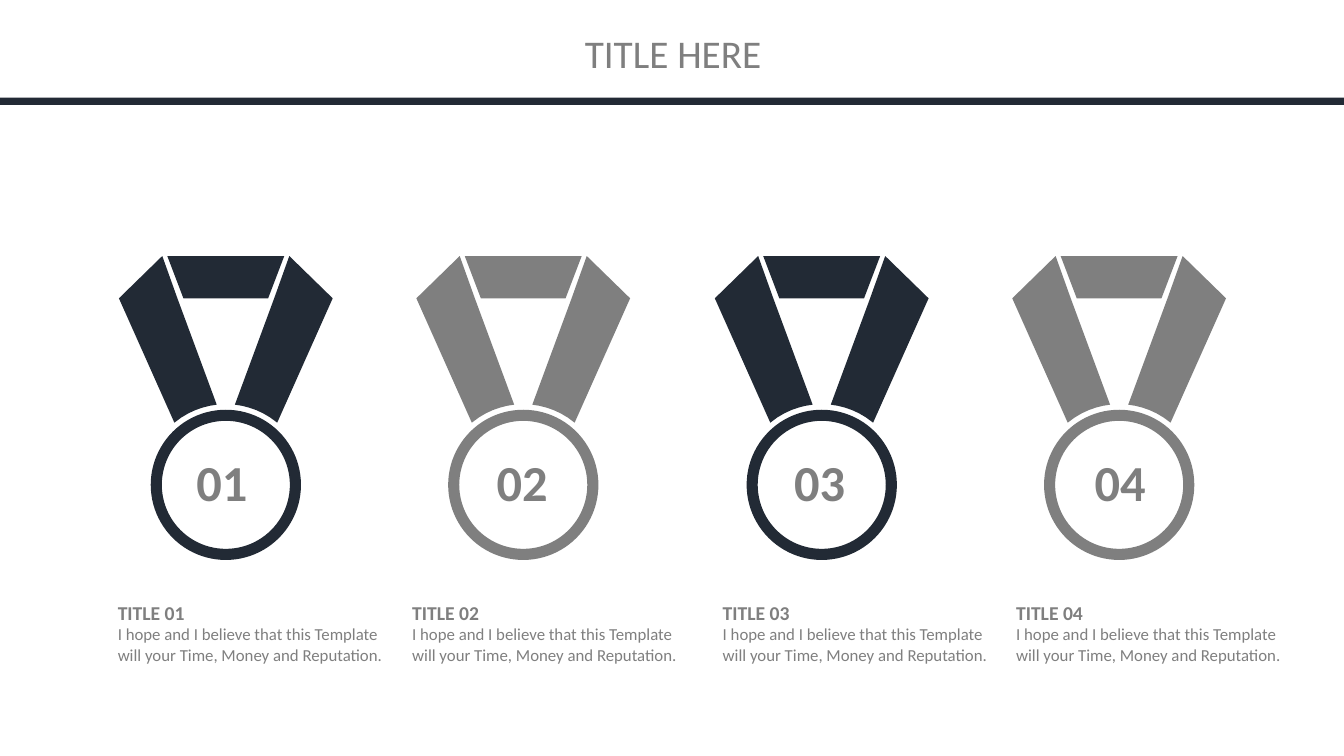
import math
from pptx import Presentation
from pptx.dml.color import RGBColor
from pptx.enum import shapes, text
from pptx.util import Inches, Pt

NAVY, GRAY = "222A35", "7F7F7F"
FONT = "Calibri"
TITLE = "TITLE HERE"
BODY = "I hope and I believe that this Template will your Time, Money and Reputation."
MEDALS = [
    {"no": "01", "color": NAVY, "center": 2.24, "no_center": 2.2, "text_left": 1.07},
    {"no": "02", "color": GRAY, "center": 5.19, "no_center": 5.18, "text_left": 3.99},
    {"no": "03", "color": NAVY, "center": 8.15, "no_center": 8.13, "text_left": 7.07},
    {"no": "04", "color": GRAY, "center": 11.1, "no_center": 11.11, "text_left": 9.98},
]
RING_Y, RING_D, RING_WIDTH = 4.81, 1.49, 0.11
STRAP_GAP_R = 0.8
STRAP_TOP, STRAP_FOLD = 2.54, 2.96
BAND = [(-0.58, STRAP_TOP), (0.58, STRAP_TOP), (0.42, STRAP_FOLD), (-0.42, STRAP_FOLD)]
ARC_XS = [0.51 - 0.07 * i for i in range(7)]
STRAP = (
    [(0.63, STRAP_TOP), (1.06, STRAP_FOLD)]
    + [(x, RING_Y - math.sqrt(STRAP_GAP_R**2 - x**2)) for x in ARC_XS]
    + [(0.48, STRAP_FOLD)]
)

prs = Presentation()
prs.slide_width, prs.slide_height = Inches(13.33), Inches(7.5)
s = prs.slides.add_slide(prs.slide_layouts[6])


def rgb(color):
    return RGBColor.from_string(color)


def paint(sp, color):
    sp.shadow.inherit = False
    sp.fill.solid()
    sp.fill.fore_color.rgb = rgb(color)
    sp.line.fill.background()
    return sp


def add_preset(kind, x, y, w, h, color):
    return paint(s.shapes.add_shape(kind, Inches(x), Inches(y), Inches(w), Inches(h)), color)


def add_outline(center, points, color, side=1):
    pts = [(Inches(center + side * x), Inches(y)) for x, y in points]
    fb = s.shapes.build_freeform(*pts[0], scale=1.0)
    fb.add_line_segments(pts[1:], close=True)
    paint(fb.convert_to_shape(), color)


def add_text(x, y, w, h, lines, align=text.PP_ALIGN.LEFT, inset=True):
    tf = s.shapes.add_textbox(Inches(x), Inches(y), Inches(w), Inches(h)).text_frame
    tf.word_wrap = True
    if not inset:
        tf.margin_left = tf.margin_right = tf.margin_top = tf.margin_bottom = 0
    for i, (words, size, bold) in enumerate(lines):
        p = tf.add_paragraph() if i else tf.paragraphs[0]
        p.alignment = align
        r = p.add_run()
        r.text = words
        r.font.name, r.font.size, r.font.bold = FONT, Pt(size), bold
        r.font.color.rgb = rgb(GRAY)


def add_medal(no, color, center, no_center, text_left):
    add_outline(center, BAND, color)
    for side in (-1, 1):
        add_outline(center, STRAP, color, side)
    ring = add_preset(shapes.MSO_SHAPE.DONUT, center - RING_D / 2, RING_Y - RING_D / 2,
                      RING_D, RING_D, color)
    ring.adjustments[0] = RING_WIDTH / RING_D
    add_text(no_center - 0.57, 4.43, 1.14, 0.71, [(no, 36, True)], text.PP_ALIGN.CENTER)
    add_text(text_left, 5.91, 2.9, 1.01, [(f"TITLE {no}", 14, True), (BODY, 12, False)])


add_preset(shapes.MSO_SHAPE.RECTANGLE, 0, 0.97, 13.33, 0.07, NAVY)
add_text(4.85, 0.29, 3.65, 0.47, [(TITLE, 28, False)], text.PP_ALIGN.CENTER, inset=False)
for medal in MEDALS:
    add_medal(**medal)

prs.save("out.pptx")
